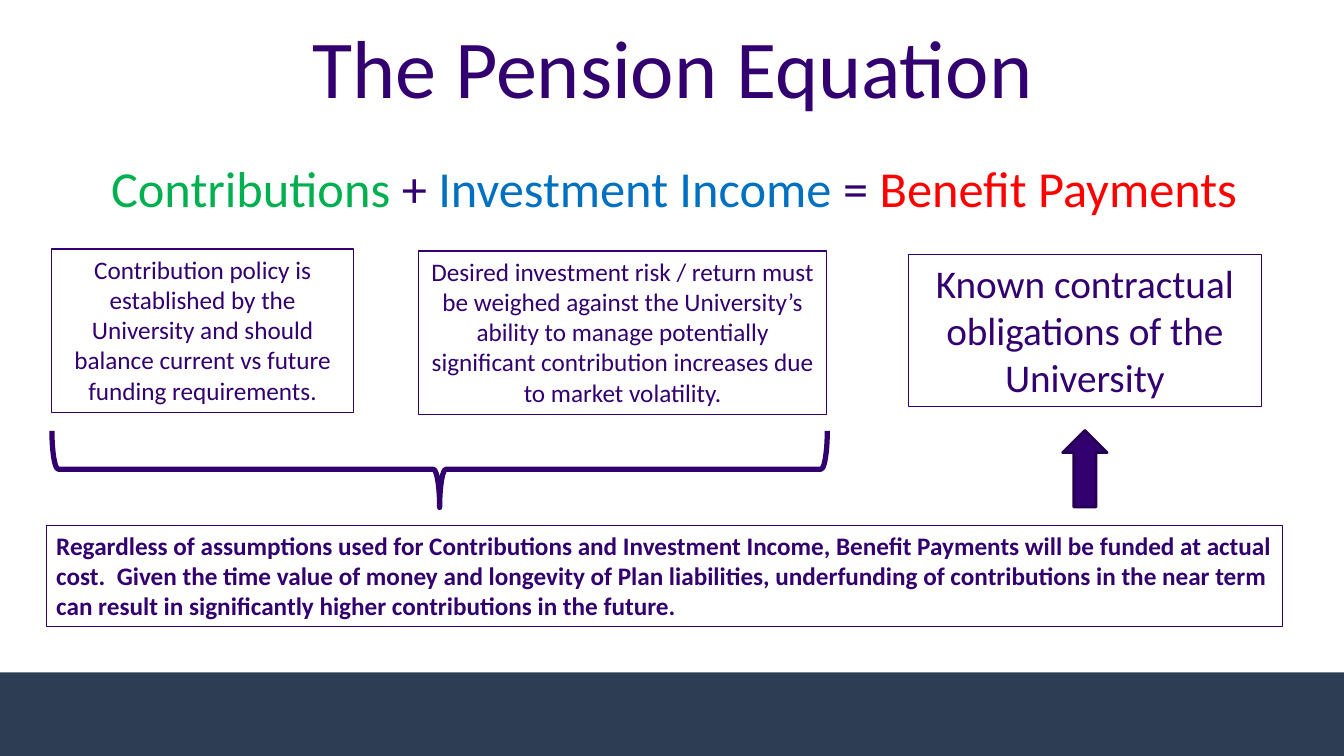
from pptx import Presentation
from pptx.dml.color import RGBColor
from pptx.enum.shapes import MSO_SHAPE
from pptx.enum.text import MSO_ANCHOR, MSO_AUTO_SIZE, PP_ALIGN
from pptx.util import Inches, Pt

RECTANGLE, BRACE, UP_ARROW = MSO_SHAPE.RECTANGLE, MSO_SHAPE.RIGHT_BRACE, MSO_SHAPE.UP_ARROW
MIDDLE, GROW = MSO_ANCHOR.MIDDLE, MSO_AUTO_SIZE.SHAPE_TO_FIT_TEXT
LEFT, CENTER = PP_ALIGN.LEFT, PP_ALIGN.CENTER
PURPLE = "33006F"
BRACE_PURPLE = "30006E"


def color(value):
    return RGBColor.from_string(value)


def format_paragraph(paragraph, size, alignment=CENTER, bold=False):
    paragraph.alignment = alignment
    paragraph.font.name = "Calibri"
    paragraph.font.size = Pt(size)
    paragraph.font.bold = bold
    paragraph.font.color.rgb = color(PURPLE)


presentation = Presentation()
presentation.slide_width = Inches(13.33)
presentation.slide_height = Inches(7.5)
slide = presentation.slides.add_slide(presentation.slide_layouts[5])
shapes = slide.shapes

footer_top = Inches(6.67)
footer = shapes.add_shape(RECTANGLE, 0, footer_top, presentation.slide_width,
                          presentation.slide_height - footer_top)
footer.shadow.inherit = False
footer.fill.solid()
footer.fill.fore_color.rgb = color("2D3D54")
footer.line.fill.background()

title = shapes.title
title.left, title.top, title.width, title.height = map(Inches, (0.08, 0.03, 13.18, 1.24))
title.text_frame.text = "The Pension Equation"
title.text_frame.vertical_anchor = MIDDLE
format_paragraph(title.text_frame.paragraphs[0], 58.7)

equation = shapes.add_textbox(*map(Inches, (0, 1.45, 13.18, 0.82)))
equation.text_frame.word_wrap = True
equation.text_frame.vertical_anchor = MIDDLE
equation.text_frame.margin_left = Inches(0.29)
equation_paragraph = equation.text_frame.paragraphs[0]
format_paragraph(equation_paragraph, 36)
for text, text_color in [
    ("Contributions ", "00B050"),
    ("+ ", PURPLE),
    ("Investment Income ", "0070C0"),
    ("= ", PURPLE),
    ("Benefit Payments", "FF0000"),
]:
    run = equation_paragraph.add_run()
    run.text = text
    run.font.color.rgb = color(text_color)

explanations = [
    ((9.01, 2.52, 3.5, 1.51), 28, CENTER, False,
     "Known contractual obligations of the University"),
    ((4.15, 2.49, 4.05, 1.62), 18, CENTER, False,
     "Desired investment risk / return must be weighed against the University’s ability to "
     "manage potentially significant contribution increases due to market volatility."),
    ((0.51, 2.47, 3, 1.62), 18, CENTER, False,
     "Contribution policy is established by the University and should balance current vs "
     "future funding requirements."),
    ((0.46, 5.21, 12.26, 1.01), 18, LEFT, True,
     "Regardless of assumptions used for Contributions and Investment Income, Benefit Payments "
     "will be funded at actual cost.  Given the time value of money and longevity of Plan "
     "liabilities, underfunding of contributions in the near term can result in significantly "
     "higher contributions in the future."),
]
for box, size, alignment, bold, text in explanations:
    explanation = shapes.add_textbox(*map(Inches, box))
    explanation.line.color.rgb = color(PURPLE)
    explanation.line.width = Pt(0.75)
    explanation.text_frame.word_wrap = True
    explanation.text_frame.auto_size = GROW
    explanation.text_frame.text = text
    format_paragraph(explanation.text_frame.paragraphs[0], size, alignment, bold)

brace = shapes.add_shape(BRACE, *map(Inches, (3.98, 0.81, 0.76, 7.69)))
brace.rotation = 90
brace.shadow.inherit = False
brace.fill.background()
brace.line.color.rgb = color(BRACE_PURPLE)
brace.line.width = Pt(3.75)

arrow = shapes.add_shape(UP_ARROW, *map(Inches, (10.54, 4.27, 0.44, 0.76)))
arrow.shadow.inherit = False
arrow.fill.solid()
arrow.fill.fore_color.rgb = color(PURPLE)
arrow.line.color.rgb = color("250051")
arrow.line.width = Pt(2)

presentation.save("out.pptx")
